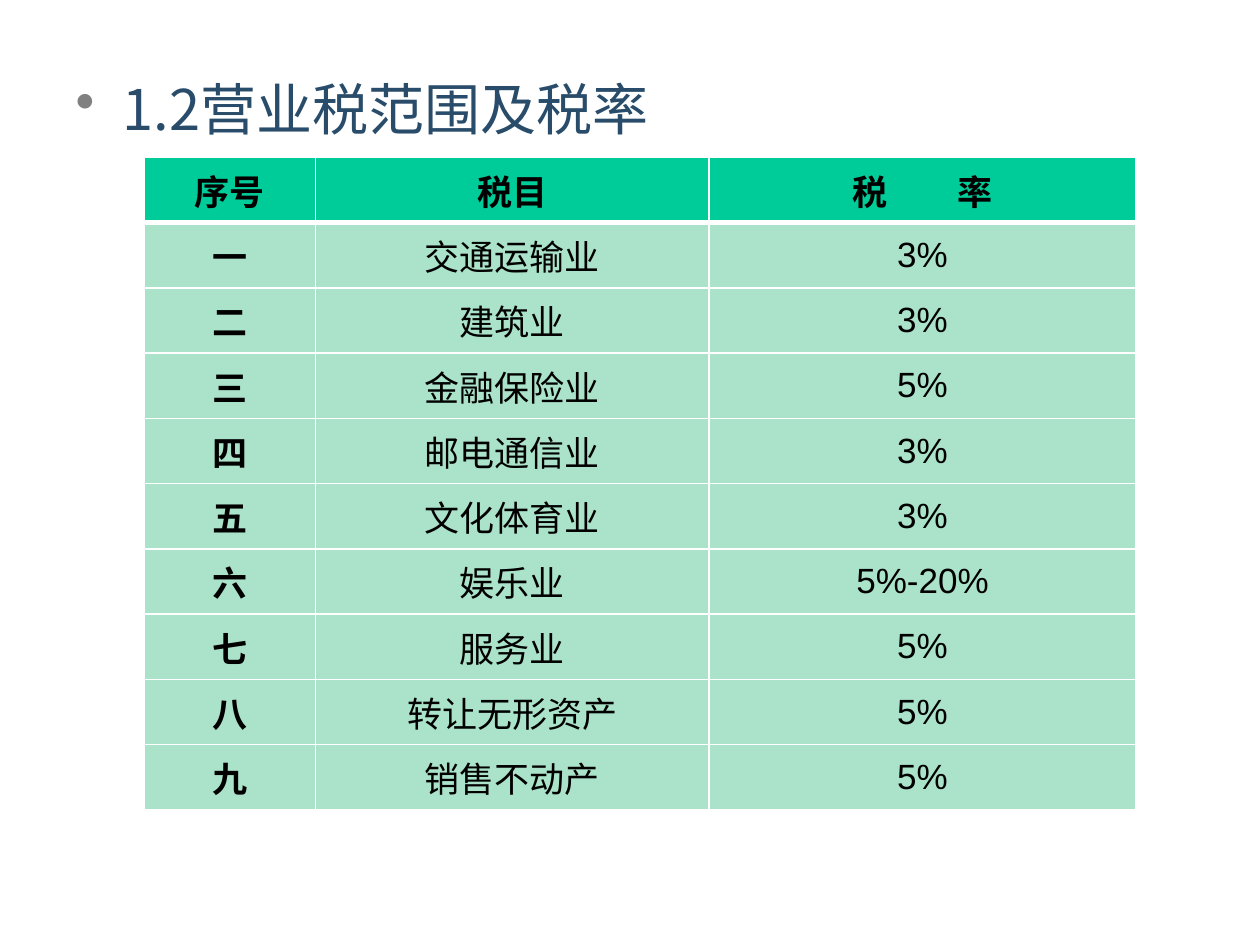
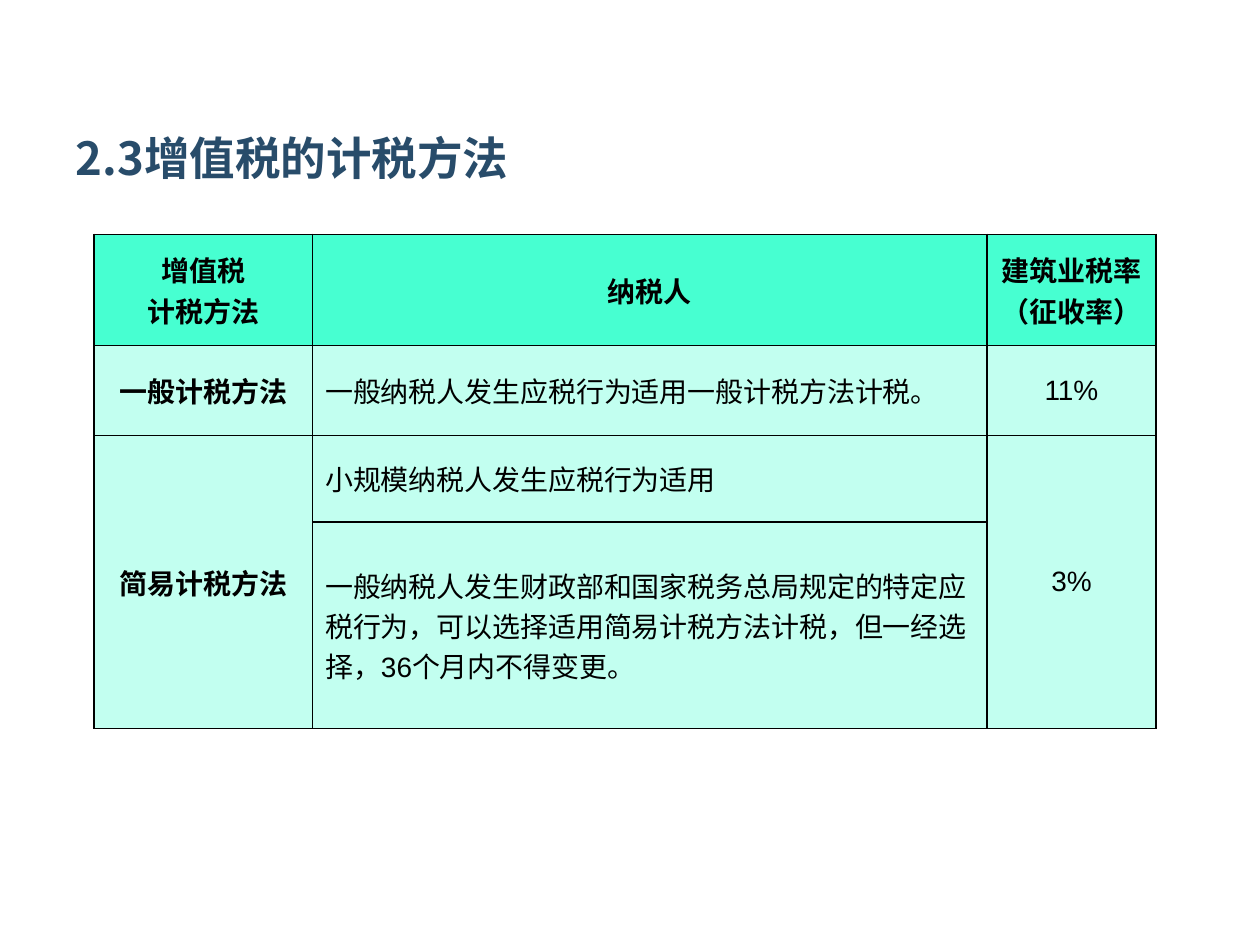
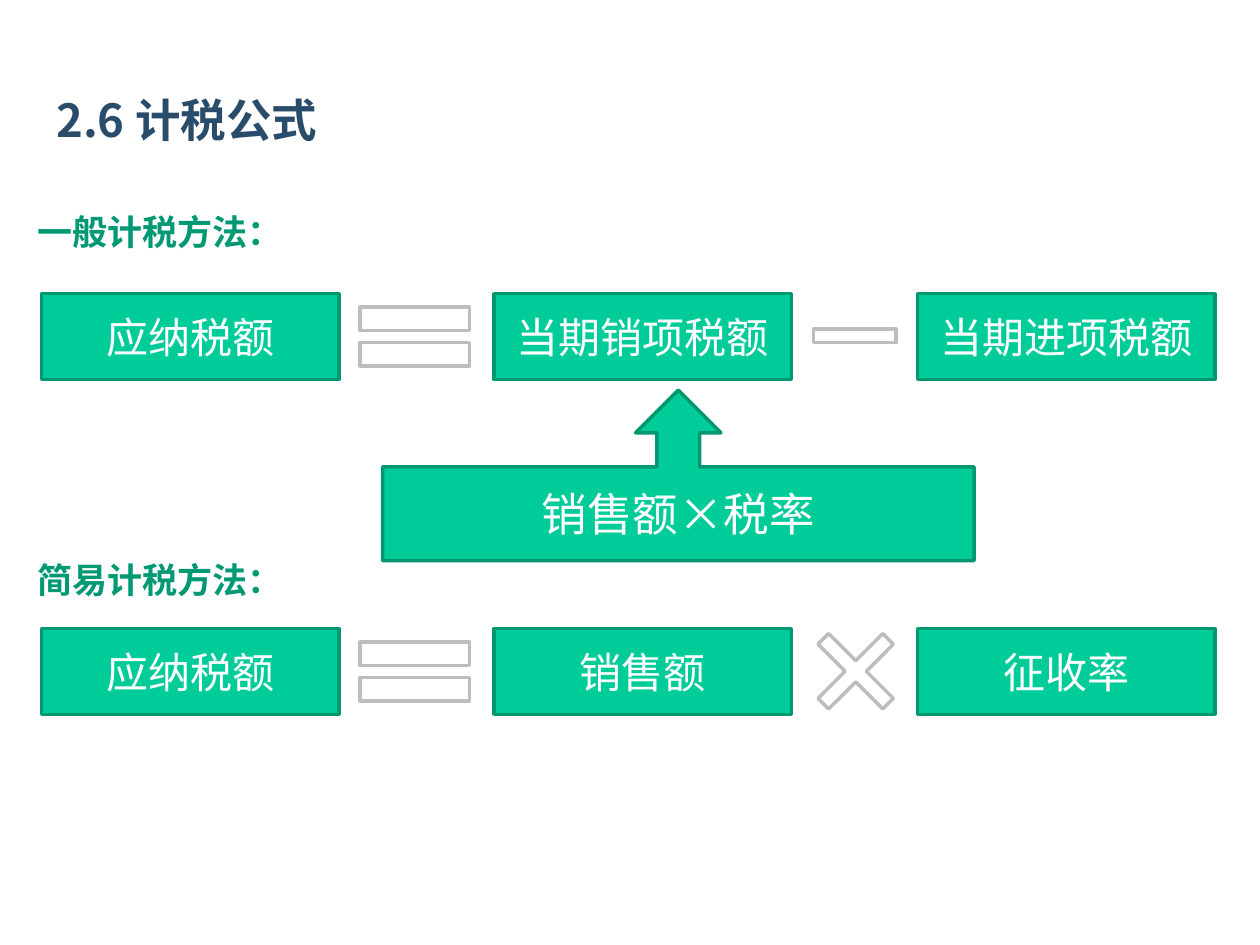
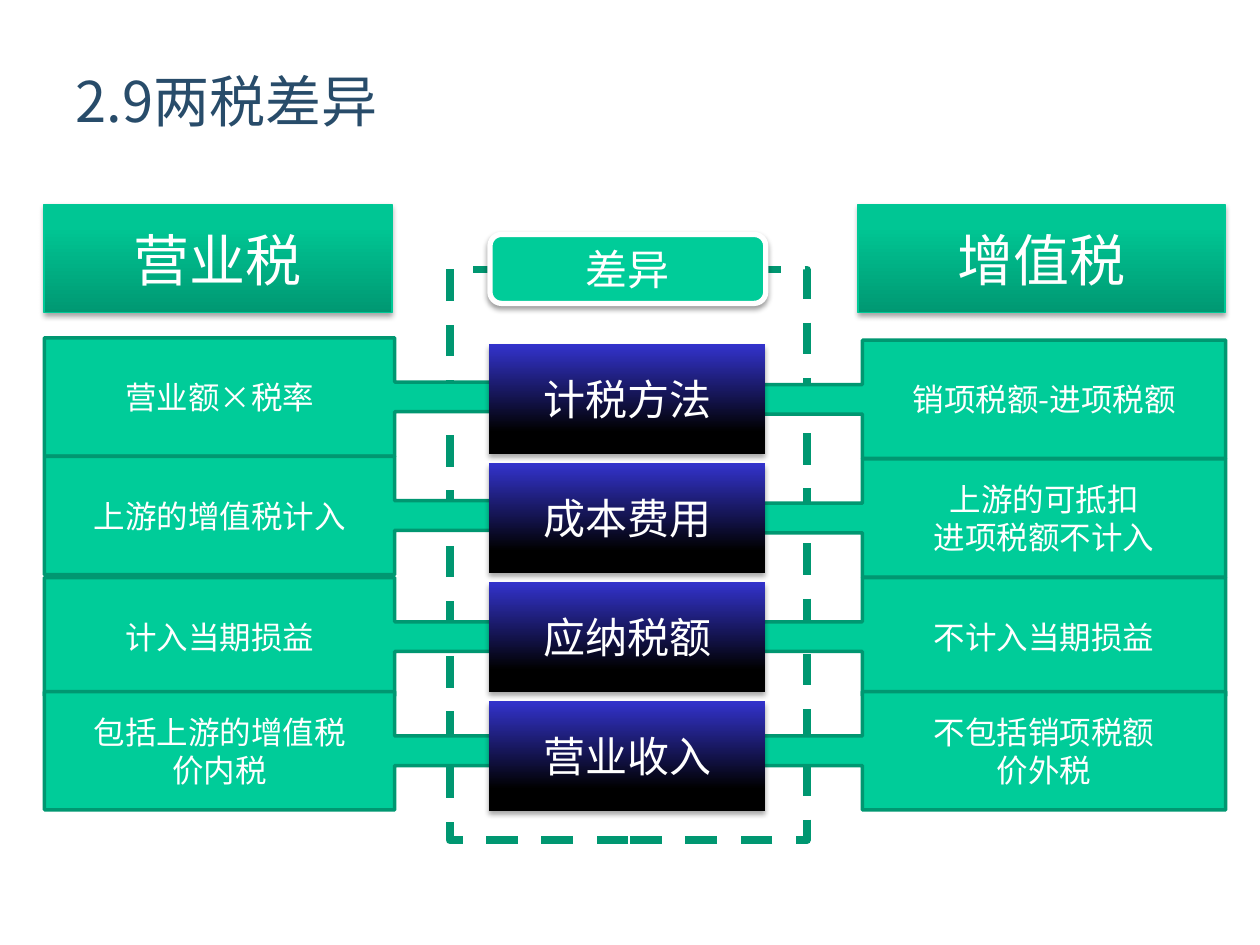
from copy import deepcopy

from lxml import etree
from pptx import Presentation
from pptx.dml.color import RGBColor
from pptx.enum.dml import MSO_LINE
from pptx.enum.shapes import MSO_SHAPE
from pptx.enum.text import MSO_ANCHOR, MSO_AUTO_SIZE, PP_ALIGN
from pptx.oxml.ns import qn
from pptx.util import Pt

LEFT, CENTER = PP_ALIGN.LEFT, PP_ALIGN.CENTER
MIDDLE = MSO_ANCHOR.MIDDLE
NO_FIT, GROW = MSO_AUTO_SIZE.NONE, MSO_AUTO_SIZE.SHAPE_TO_FIT_TEXT
RECT = MSO_SHAPE.RECTANGLE
ROUNDED = MSO_SHAPE.FLOWCHART_ALTERNATE_PROCESS
EQUAL, MINUS, TIMES = MSO_SHAPE.MATH_EQUAL, MSO_SHAPE.MATH_MINUS, MSO_SHAPE.MATH_MULTIPLY
UP_CALLOUT = MSO_SHAPE.UP_ARROW_CALLOUT
RIGHT_CALLOUT, LEFT_CALLOUT = MSO_SHAPE.RIGHT_ARROW_CALLOUT, MSO_SHAPE.LEFT_ARROW_CALLOUT
DASH = MSO_LINE.DASH

CJK = "Noto Sans CJK SC"
COLORS = {
    "white": "FFFFFF", "black": "000000", "title": "284C6A", "bullet": "808080",
    "green": "00CC99", "edge": "009771", "label": "009973", "symbol": "BDBDBD",
    "mint": "AAE2CA", "aqua": "47FFD1", "pale": "C2FFF0",
    "deep": "009872", "bright": "00C694", "top": "00C795", "rim": "00C896",
    "blue": "3333CC",
}
HEADER_GRADIENT = (("deep", "bright", "top"), 90)
TOPIC_GRADIENT = (("blue", "black", "black"), 270)
GRADIENT_POSITIONS = (0, 0.8, 1)


def rgb(color):
    return RGBColor.from_string(COLORS[color])


def add_element(parent, tag, **attributes):
    element = etree.SubElement(parent, qn(tag))
    for key, value in attributes.items():
        element.set(key, str(value))
    return element


def write_text(frame, text, size=24, color="white", font=CJK, bold=False,
               align=CENTER, anchor=MIDDLE):
    frame.word_wrap = True
    frame.vertical_anchor = anchor
    for index, line in enumerate(text.split("\n")):
        paragraph = frame.add_paragraph() if index else frame.paragraphs[0]
        paragraph.alignment = align
        run = paragraph.add_run()
        run.text = line
        run.font.name = font
        run.font.size = Pt(size)
        run.font.bold = bold
        run.font.color.rgb = rgb(color)
        add_element(run.font._element, "a:ea", typeface=CJK)


def add_titled_slide(prs, title, box, size, bold=False):
    slide = prs.slides.add_slide(prs.slide_layouts[5])
    heading = slide.shapes.title
    heading.left, heading.top, heading.width, heading.height = map(Pt, box)
    heading.text_frame.auto_size = NO_FIT
    write_text(heading.text_frame, title, size=size, color="title", bold=bold, align=LEFT)
    return slide


def add_bullet(paragraph, indent):
    properties = paragraph._p.get_or_add_pPr()
    properties.set("marL", str(Pt(indent)))
    properties.set("indent", str(-Pt(indent)))
    bullet_color = add_element(properties, "a:buClr")
    add_element(bullet_color, "a:srgbClr", val=COLORS["bullet"])
    add_element(properties, "a:buChar", char="•")
    paragraph.line_spacing = 1.25


def apply_gradient(shape, colors, angle):
    shape.fill.gradient()
    shape.fill.gradient_angle = angle
    stop_list = shape._element.spPr.find(".//" + qn("a:gsLst"))
    stop_list.append(deepcopy(stop_list[-1]))
    for stop, color, position in zip(shape.fill.gradient_stops, colors, GRADIENT_POSITIONS):
        stop.color.rgb = rgb(color)
        stop.position = position


def add_shadow(shape, opacity, distance):
    effects = shape._element.spPr.find(qn("a:effectLst"))
    outer = add_element(effects, "a:outerShdw", blurRad=Pt(3.1), dist=Pt(distance),
                        dir=5400000, rotWithShape=0)
    shade = add_element(outer, "a:srgbClr", val=COLORS["black"])
    add_element(shade, "a:alpha", val=opacity * 1000)


def add_figure(slide, kind, box, text="", fill="green", line="edge", weight=2,
               dash=None, gradient=None, shadow=None, adjustments=(), **text_format):
    shape = slide.shapes.add_shape(kind, *map(Pt, box))
    shape.shadow.inherit = False
    for index, value in enumerate(adjustments):
        shape.adjustments[index] = value
    if gradient:
        apply_gradient(shape, *gradient)
    elif fill:
        shape.fill.solid()
        shape.fill.fore_color.rgb = rgb(fill)
    else:
        shape.fill.background()
    if line:
        shape.line.color.rgb = rgb(line)
        shape.line.width = Pt(weight)
        if dash:
            shape.line.dash_style = dash
    else:
        shape.line.fill.background()
    if shadow:
        add_shadow(shape, *shadow)
    if text:
        write_text(shape.text_frame, text, **text_format)


def add_label(slide, box, text):
    label = slide.shapes.add_textbox(*map(Pt, box))
    write_text(label.text_frame, text, size=20, color="label", font="Arial", bold=True,
               align=LEFT, anchor=MSO_ANCHOR.TOP)
    label.text_frame.auto_size = GROW


def add_grid(slide, left, top, widths, heights):
    frame = slide.shapes.add_table(len(heights), len(widths), Pt(left), Pt(top),
                                   Pt(sum(widths)), Pt(sum(heights)))
    table = frame.table
    table.first_row = table.horz_banding = False
    for column, width in zip(table.columns, widths):
        column.width = Pt(width)
    for row, height in zip(table.rows, heights):
        row.height = Pt(height)
    return table


def format_cell(cell, fill, border, bottom=1):
    properties = cell._tc.get_or_add_tcPr()
    for side, weight in (("L", 1), ("R", 1), ("T", 1), ("B", bottom)):
        edge = add_element(properties, "a:ln" + side, w=Pt(weight))
        edge_fill = add_element(edge, "a:solidFill")
        add_element(edge_fill, "a:srgbClr", val=COLORS[border])
    cell.fill.solid()
    cell.fill.fore_color.rgb = rgb(fill)
    cell.vertical_anchor = MIDDLE


def build_rate_slide(prs):
    slide = add_titled_slide(prs, "1.2营业税范围及税率", (36, 12, 684, 90), 32)
    add_bullet(slide.shapes.title.text_frame.paragraphs[0], 27)
    rates = (
        ("序号", "税目", "税　　率"),
        ("一", "交通运输业", "3%"),
        ("二", "建筑业", "3%"),
        ("三", "金融保险业", "5%"),
        ("四", "邮电通信业", "3%"),
        ("五", "文化体育业", "3%"),
        ("六", "娱乐业", "5%-20%"),
        ("七", "服务业", "5%"),
        ("八", "转让无形资产", "5%"),
        ("九", "销售不动产", "5%"),
    )
    table = add_grid(slide, 82.4, 90, (97.8, 225, 244), [37.3] * len(rates))
    for r, row in enumerate(rates):
        fonts = (CJK, CJK, "Arial") if r else ("Calibri", "Calibri", "Arial")
        for c, text in enumerate(row):
            cell = table.cell(r, c)
            cell.margin_left = cell.margin_right = Pt(3)
            cell.margin_top = cell.margin_bottom = Pt(3)
            format_cell(cell, "mint" if r else "green", "white", 1 if r else 3)
            if r == 1:
                top_edge = cell._tc.tcPr.find(qn("a:lnT"))
                top_edge.set("w", str(Pt(3)))
            write_text(cell.text_frame, text, size=20, color="black", font=fonts[c],
                       bold=r == 0 or c == 0)


def build_method_slide(prs):
    slide = add_titled_slide(prs, "2.3增值税的计税方法", (36, 54, 636, 72), 26, bold=True)
    methods = (
        ("增值税\n计税方法", "纳税人", "建筑业税率（征收率）"),
        ("一般计税方法", "一般纳税人发生应税行为适用一般计税方法计税。", "11%"),
        ("简易计税方法", "小规模纳税人发生应税行为适用", "3%"),
        ("", "一般纳税人发生财政部和国家税务总局规定的特定应税行为，"
             "可以选择适用简易计税方法计税，但一经选择，36个月内不得变更。", ""),
    )
    table = add_grid(slide, 53.8, 134, (124.8, 385.4, 96.6), (63.4, 51.6, 49.2, 118.2))
    for c in (0, 2):
        table.cell(2, c).merge(table.cell(3, c))
    for r, row in enumerate(methods):
        for c, text in enumerate(row):
            cell = table.cell(r, c)
            format_cell(cell, "pale" if r else "aqua", "black")
            if text:
                write_text(cell.text_frame, text, size=16, color="black", font="Arial",
                           bold=r == 0 or c == 0, align=LEFT if r and c == 1 else CENTER)


def add_formula(slide, top, terms, label, label_top):
    add_label(slide, (14.4, label_top, 206, 31.5), label)
    for left, term in zip((23.6, 282.4, 524.4), terms):
        add_figure(slide, RECT, (left, top, 170, 49), term)
    add_figure(slide, EQUAL, (194.6, top - 4, 85, 57), fill="white", line="symbol")


def build_formula_slide(prs):
    slide = add_titled_slide(prs, "2.6 计税公式", (25, 32, 636, 72), 26, bold=True)
    add_formula(slide, 167.8, ("应纳税额", "当期销项税额", "当期进项税额"),
                "一般计税方法：", 116.6)
    add_figure(slide, MINUS, (456.4, 175, 64, 33.8), fill="white", line="symbol")
    add_formula(slide, 359.2, ("应纳税额", "销售额", "征收率"), "简易计税方法：", 315.4)
    add_figure(slide, TIMES, (453.4, 348, 71.2, 71.2), fill="white", line="symbol",
               adjustments=(0.12,))
    add_figure(slide, UP_CALLOUT, (218.6, 223, 338, 97.4), "销售额×税率", size=26,
               adjustments=(0.25, 0.25, 0.25, 0.55))


def build_difference_slide(prs):
    slide = add_titled_slide(prs, "2.9两税差异", (36, 12, 684, 90), 32)
    add_figure(slide, RECT, (257, 154, 204, 326.2), fill=None, weight=4.5, dash=DASH)
    for left, width, tax in ((25.2, 198.8, "营业税"), (490.4, 209.6, "增值税")):
        add_figure(slide, RECT, (left, 116.8, width, 62), tax, size=32, line="rim",
                   weight=0.75, gradient=HEADER_GRADIENT, shadow=(35, 1.8))
    comparisons = (
        ("计税方法", 193, "营业额×税率", 194.4, "销项税额-进项税额"),
        ("成本费用", 260.8, "上游的增值税计入", 262.2, "上游的可抵扣\n进项税额不计入"),
        ("应纳税额", 330, "计入当期损益", 330, "不计入当期损益"),
        ("营业收入", 395.2, "包括上游的增值税\n价内税", 395.2, "不包括销项税额\n价外税"),
    )
    for _, business_top, business, added_top, added in comparisons:
        add_figure(slide, RIGHT_CALLOUT, (25.4, business_top, 278, 67.6), business, size=18,
                   adjustments=(0.25, 0.25, 0.25, 0.72))
        add_figure(slide, LEFT_CALLOUT, (416, added_top, 284.4, 67.6), added, size=18,
                   adjustments=(0.25, 0.25, 0.25, 0.73))
    for index, (topic, *_) in enumerate(comparisons):
        add_figure(slide, RECT, (279.4, 196.8 + 68 * index, 158, 62.4), topic, line=None,
                   gradient=TOPIC_GRADIENT, shadow=(35, 1.8))
    add_figure(slide, ROUNDED, (280, 134, 157.6, 39.4), "差异", line="white", weight=3,
               shadow=(38, 1.6))


def main():
    prs = Presentation()
    prs.slide_width, prs.slide_height = Pt(720), Pt(540)
    build_rate_slide(prs)
    build_method_slide(prs)
    build_formula_slide(prs)
    build_difference_slide(prs)
    prs.save("out.pptx")


if __name__ == "__main__":
    main()
